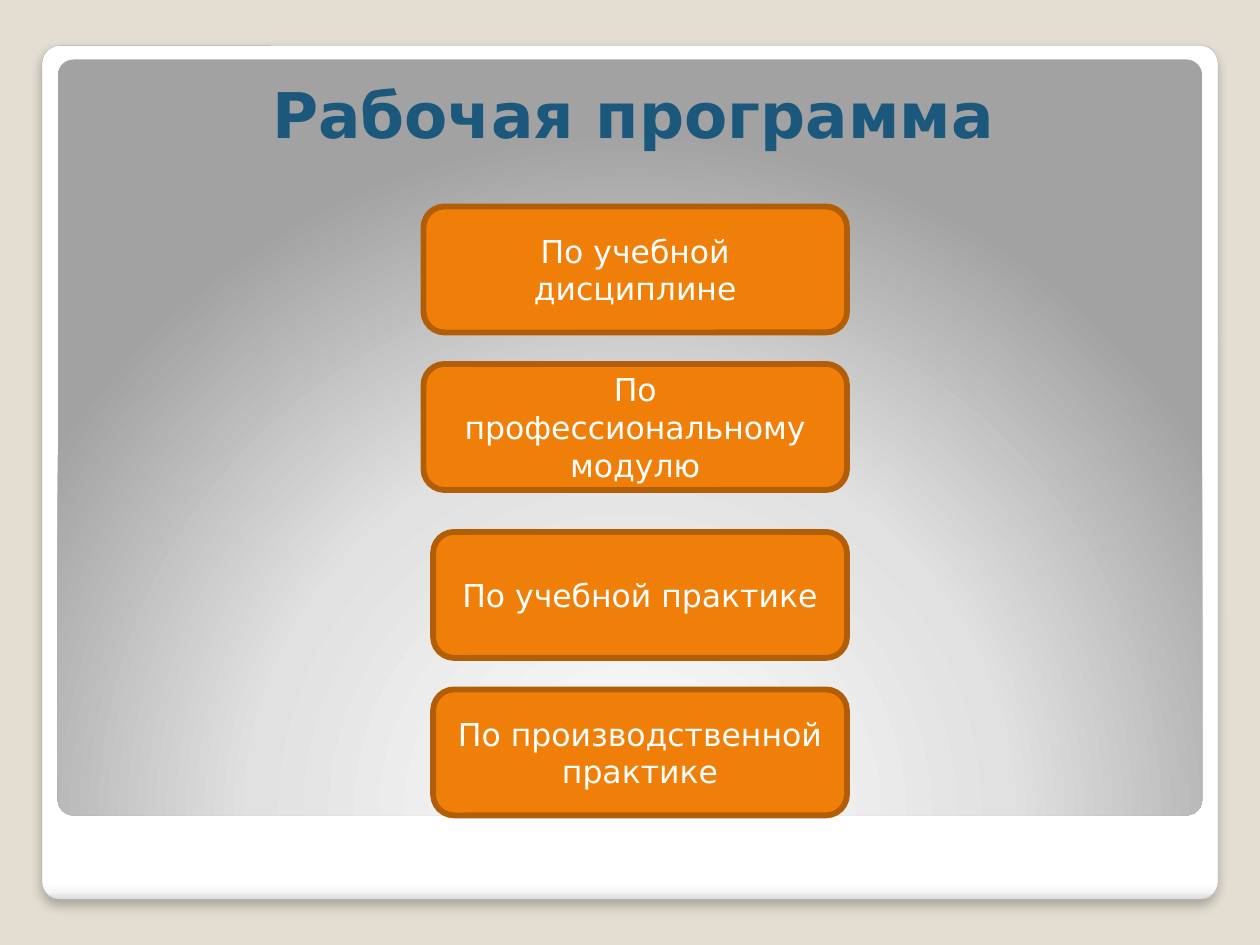
from lxml.etree import SubElement
from pptx import Presentation
from pptx.dml.color import RGBColor
from pptx.enum.shapes import MSO_SHAPE
from pptx.enum.text import MSO_ANCHOR, PP_ALIGN
from pptx.oxml.ns import qn
from pptx.util import Pt

TITLE = "Рабочая программа"
# text, left, top
CARDS = [
    ("По учебной дисциплине", 242, 118),
    ("По профессиональному модулю", 242, 208),
    ("По учебной практике", 247.5, 304),
    ("По производственной практике", 247.5, 394),
]
CARD_RIGHT, CARD_HEIGHT = 484, 72
FRAME_BOX = (24, 26, 672, 488)
PANEL_BOX = (33, 34, 654, 432)
TITLE_BOX = (39.5, 34, 644.5, 56)

THEME = {
    "font": "DejaVu Sans", "title_size": 36, "card_size": 18,
    "background": "E3DED1", "title": "1B587C", "card_text": "FFFFFF",
    "card": "F07F09", "card_line": "B25E07", "frame_line": "A4A4A4", "shadow": "000000",
    "frame_stops": [(0, "FFFFFF"), (98, "FFFFFF"), (99, "F7F7F7"), (100, "DADADA")],
    "panel_stops": [(0, "FFFFFF"), (55, "E1E1E1"), (100, "A2A2A2")],
}


def rgb(name):
    return RGBColor.from_string(THEME[name])


def add_element(parent, tag, **attrs):
    return SubElement(parent, qn(tag), {k: str(v) for k, v in attrs.items()})


def add_round_rect(slide, box, adjust=None):
    sp = slide.shapes.add_shape(MSO_SHAPE.ROUNDED_RECTANGLE, *map(Pt, box))
    sp.shadow.inherit = False
    if adjust is not None:
        sp.adjustments[0] = adjust
    return sp


def set_line(sp, color, width):
    sp.line.color.rgb = rgb(color)
    sp.line.width = Pt(width)


def set_gradient(sp, stops):
    """Fill with (percent, colour) stops; return the fill element, still without direction."""
    sp.fill.gradient()
    grad = sp.element.spPr.find(qn("a:gradFill"))
    for child in list(grad):
        grad.remove(child)
    stop_list = add_element(grad, "a:gsLst")
    for percent, color in stops:
        stop = add_element(stop_list, "a:gs", pos=percent * 1000)
        add_element(stop, "a:srgbClr", val=color)
    return grad


def set_text(sp, text, size, color, anchor, bold=False):
    tf = sp.text_frame
    tf.text = text
    tf.word_wrap = True
    tf.vertical_anchor = anchor
    p = tf.paragraphs[0]
    p.alignment = PP_ALIGN.CENTER
    font = p.runs[0].font
    font.name, font.size, font.bold = THEME["font"], Pt(THEME[size]), bold
    font.color.rgb = rgb(color)


def add_frame(slide):
    sp = add_round_rect(slide, FRAME_BOX, 0.021)
    grad = set_gradient(sp, THEME["frame_stops"])
    add_element(grad, "a:lin", ang=90 * 60000, scaled=0)
    set_line(sp, "frame_line", 0.16)
    effects = sp.element.spPr.find(qn("a:effectLst"))
    shadow = add_element(effects, "a:outerShdw", blurRad=Pt(6), dist=Pt(4),
                         dir=90 * 60000, rotWithShape=0)
    color = add_element(shadow, "a:srgbClr", val=THEME["shadow"])
    add_element(color, "a:alpha", val=25000)


def add_panel(slide):
    sp = add_round_rect(slide, PANEL_BOX, 0.021)
    grad = set_gradient(sp, THEME["panel_stops"])
    direction = add_element(grad, "a:path", path="circle")
    add_element(direction, "a:fillToRect", l=50000, t=175000, r=50000, b=-75000)
    sp.line.fill.background()


def add_card(slide, text, left, top):
    sp = add_round_rect(slide, (left, top, CARD_RIGHT - left, CARD_HEIGHT))
    sp.fill.solid()
    sp.fill.fore_color.rgb = rgb("card")
    set_line(sp, "card_line", 3.35)
    set_text(sp, text, "card_size", "card_text", MSO_ANCHOR.MIDDLE)


def main():
    prs = Presentation()
    prs.slide_width, prs.slide_height = Pt(720), Pt(540)
    slide = prs.slides.add_slide(prs.slide_layouts[6])
    slide.background.fill.solid()
    slide.background.fill.fore_color.rgb = rgb("background")
    add_frame(slide)
    add_panel(slide)
    title = slide.shapes.add_textbox(*map(Pt, TITLE_BOX))
    set_text(title, TITLE, "title_size", "title", MSO_ANCHOR.BOTTOM, bold=True)
    for card in CARDS:
        add_card(slide, *card)
    prs.save("out.pptx")


if __name__ == "__main__":
    main()
